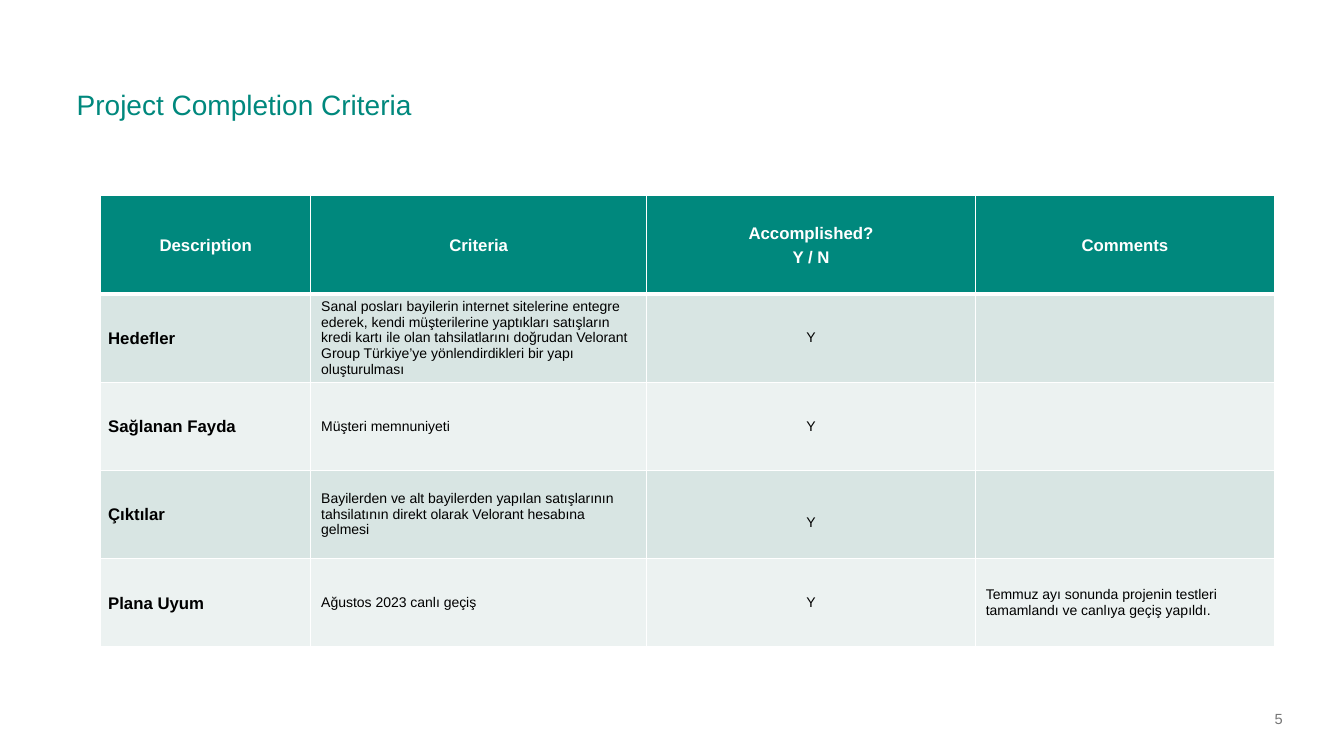
from lxml import etree
from pptx import Presentation
from pptx.dml.color import RGBColor
from pptx.enum.text import MSO_ANCHOR, PP_ALIGN
from pptx.oxml.ns import qn
from pptx.util import Pt

PX = 9525  # EMU per px, 96 px to the inch
LEFT, CENTER = PP_ALIGN.LEFT, PP_ALIGN.CENTER
MIDDLE, BOTTOM = MSO_ANCHOR.MIDDLE, MSO_ANCHOR.BOTTOM
FONT = "Arial"
COLORS = {
    "teal": "00887D",
    "dark_band": "D8E5E3",
    "light_band": "ECF2F1",
    "white": "FFFFFF",
    "black": "000000",
    "gray": "777777",
}

COLUMN_WIDTHS = [200, 320, 313, 285]
HEADER_HEIGHT, ROW_HEIGHT = 94, 84
ROWS = [
    ["Description", "Criteria", "Accomplished?\nY / N", "Comments"],
    ["Hedefler",
     "Sanal posları bayilerin internet sitelerine entegre ederek, kendi "
     "müşterilerine yaptıkları satışların kredi kartı ile olan tahsilatlarını "
     "doğrudan Velorant Group Türkiye’ye yönlendirdikleri bir yapı oluşturulması",
     "Y", ""],
    ["Sağlanan Fayda", "Müşteri memnuniyeti", "Y", ""],
    ["Çıktılar",
     "Bayilerden ve alt bayilerden yapılan satışlarının tahsilatının direkt "
     "olarak Velorant hesabına gelmesi",
     "Y", ""],
    ["Plana Uyum", "Ağustos 2023 canlı geçiş", "Y",
     "Temmuz ayı sonunda projenin testleri tamamlandı ve canlıya geçiş yapıldı."],
]
LOWERED_CELL = (3, 2)  # its answer sits half a line below the middle


def color(name):
    return RGBColor.from_string(COLORS[name])


def write(frame, text, size=10, ink="black", bold=False, align=LEFT,
          line_spacing=1.0, space_before=0):
    """Fill a text frame, one paragraph for each line of text."""
    for index, line in enumerate(text.split("\n")):
        para = frame.add_paragraph() if index else frame.paragraphs[0]
        para.alignment = align
        para.line_spacing = line_spacing
        if index:
            para.space_before = Pt(space_before)
        para.font.size = Pt(size)
        if line:
            span = para.add_run()
            span.text = line
            span.font.name = FONT
            span.font.size = Pt(size)
            span.font.bold = bold
            span.font.color.rgb = color(ink)


def set_margins(target, left, top, right, bottom):
    target.margin_left, target.margin_top = left * PX, top * PX
    target.margin_right, target.margin_bottom = right * PX, bottom * PX


def place(shape, left, top, width, height):
    shape.left, shape.top = left * PX, top * PX
    shape.width, shape.height = width * PX, height * PX


def set_borders(cell, top=1, bottom=1):
    """Draw white cell borders, with widths in points."""
    properties = cell._tc.get_or_add_tcPr()
    widths = {"a:lnL": 1, "a:lnR": 1, "a:lnT": top, "a:lnB": bottom}
    for index, (tag, width) in enumerate(widths.items()):
        line = etree.Element(qn(tag), w=str(Pt(width)))
        fill = etree.SubElement(line, qn("a:solidFill"))
        etree.SubElement(fill, qn("a:srgbClr"), val=COLORS["white"])
        properties.insert(index, line)


def add_title(page, text):
    title = page.shapes.title
    place(title, 73, 74, 1141, 42)
    frame = title.text_frame
    frame.vertical_anchor = BOTTOM
    set_margins(frame, 0, 0, 0, 0)
    write(frame, text, size=20, ink="teal", line_spacing=0.9)


def format_cell(cell, text, row, column):
    header = row == 0
    heading = header or column == 0
    band = "teal" if header else "dark_band" if row % 2 else "light_band"
    cell.fill.solid()
    cell.fill.fore_color.rgb = color(band)
    set_borders(cell, top=3 if row == 1 else 1, bottom=3 if header else 1)
    cell.vertical_anchor = MIDDLE
    align = CENTER if header or column == 2 else LEFT
    if heading:
        set_margins(cell, 7, 0, 7, 0)
        write(cell.text_frame, text, size=12, bold=True, align=align,
              ink="white" if header else "black",
              line_spacing=1.07, space_before=3)
    else:
        drop = 15 if (row, column) == LOWERED_CELL else 0
        set_margins(cell, 10, 3 + drop, 10, 3)
        write(cell.text_frame, text, align=align)


def add_criteria_table(page, left, top):
    heights = [HEADER_HEIGHT] + [ROW_HEIGHT] * (len(ROWS) - 1)
    table = page.shapes.add_table(
        len(ROWS), len(COLUMN_WIDTHS), left * PX, top * PX,
        sum(COLUMN_WIDTHS) * PX, sum(heights) * PX).table
    for column, width in zip(table.columns, COLUMN_WIDTHS):
        column.width = width * PX
    for row, (texts, height) in enumerate(zip(ROWS, heights)):
        table.rows[row].height = height * PX
        for column, text in enumerate(texts):
            format_cell(table.cell(row, column), text, row, column)


def add_page_number(page, number):
    box = page.shapes.add_textbox(0, 0, 0, 0)
    place(box, 1214, 665, 61, 39)
    frame = box.text_frame
    frame.word_wrap = True
    frame.vertical_anchor = MIDDLE
    set_margins(frame, 0, 5, 0, 5)
    write(frame, number, size=10.5, ink="gray")


def main():
    deck = Presentation()
    deck.slide_width, deck.slide_height = 1280 * PX, 720 * PX
    page = deck.slides.add_slide(deck.slide_layouts[5])  # title only
    add_title(page, "Project Completion Criteria")
    add_criteria_table(page, 96, 186)
    add_page_number(page, "5")
    deck.save("out.pptx")


if __name__ == "__main__":
    main()
